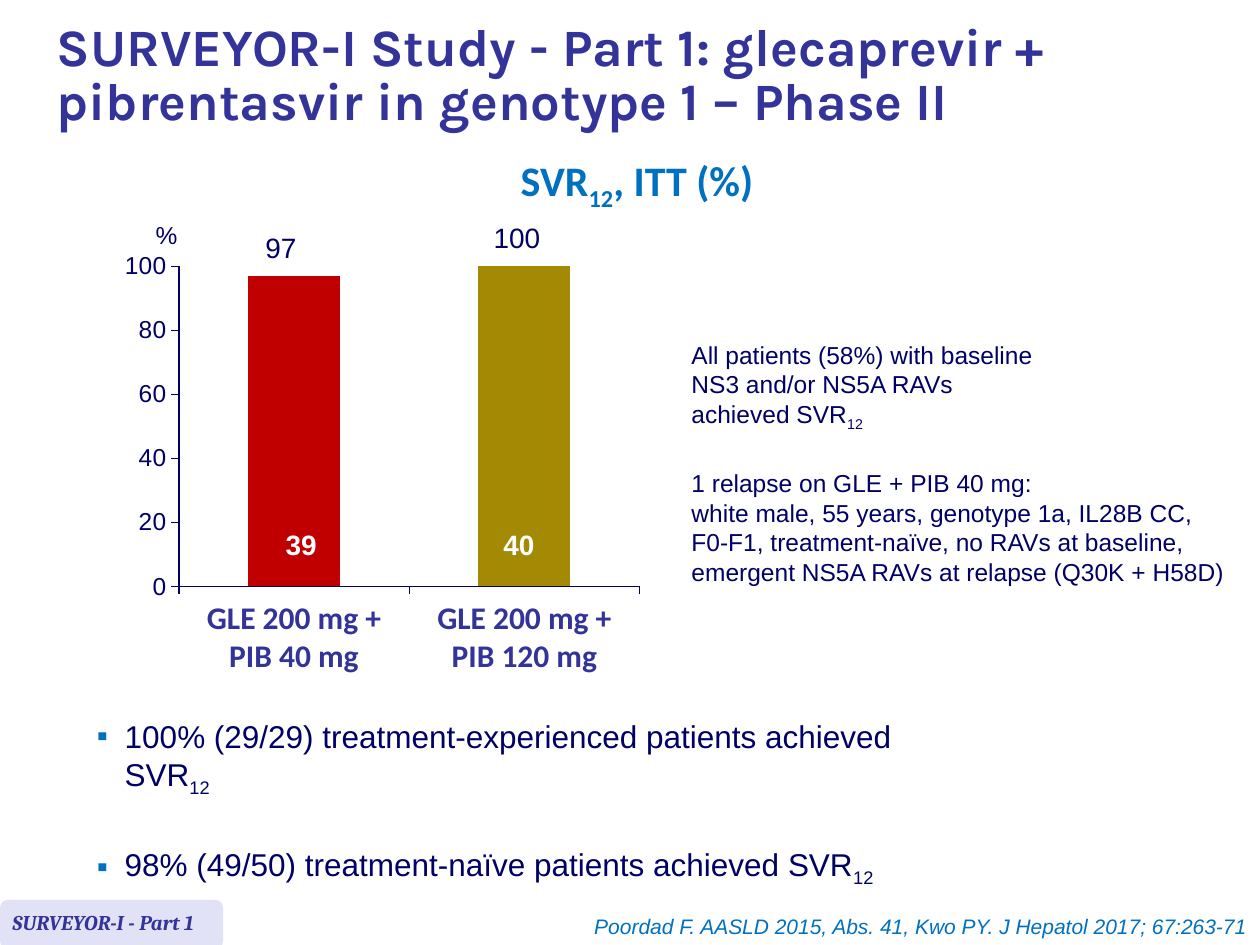
from pptx import Presentation
from pptx import util as u
from pptx.chart import data as chart_data
from pptx.dml import color
from pptx.enum import chart as chart_enum
from pptx.enum import shapes, text
from pptx.oxml import parse_xml
from pptx.oxml.ns import nsdecls

NAVY, INDIGO, BLUE, WHITE = "000066", "333399", "0070C0", "FFFFFF"
LEFT, CENTER, RIGHT = text.PP_ALIGN.LEFT, text.PP_ALIGN.CENTER, text.PP_ALIGN.RIGHT


def rgb(value):
    return color.RGBColor.from_string(value)


def set_font(font, size, value, name="Arial", bold=False, italic=False):
    font.size, font.name = u.Pt(size), name
    font.bold, font.italic = bold, italic
    font.color.rgb = rgb(value)


def fill_paragraph(paragraph, content, align=LEFT, **font):
    """Parts between bars are set as subscripts."""
    paragraph.alignment = align
    set_font(paragraph.font, **font)
    for index, part in enumerate(content.split("|")):
        if part:
            run = paragraph.add_run()
            run.text = part
            if index % 2:
                run._r.get_or_add_rPr().set("baseline", "-25000")


def place(shape, left, top, width, height):
    shape.left, shape.top = u.Cm(left), u.Cm(top)
    shape.width, shape.height = u.Cm(width), u.Cm(height)


def add_text(slide, box, lines, wrap=True, **style):
    shape = slide.shapes.add_textbox(*map(u.Cm, box))
    frame = shape.text_frame
    frame.word_wrap = wrap
    for index, line in enumerate(lines):
        paragraph = frame.paragraphs[0] if index == 0 else frame.add_paragraph()
        fill_paragraph(paragraph, line, **style)
    return shape


def set_title(slide, box):
    title = slide.shapes.title
    place(title, *box)
    frame = title.text_frame
    frame.auto_size = text.MSO_AUTO_SIZE.NONE
    frame.vertical_anchor = text.MSO_ANCHOR.MIDDLE
    paragraph = frame.paragraphs[0]
    paragraph.line_spacing = 0.85
    fill_paragraph(
        paragraph,
        "SURVEYOR-I Study - Part 1: glecaprevir + pibrentasvir in genotype 1 – Phase II",
        size=30, value=INDIGO, name="Karla", bold=True)


def set_findings(slide, box):
    body = slide.placeholders[1]
    place(body, *box)
    frame = body.text_frame
    frame.auto_size = text.MSO_AUTO_SIZE.NONE
    findings = ["100% (29/29) treatment-experienced patients achieved SVR|12|",
                "98% (49/50) treatment-naïve patients achieved SVR|12|"]
    for index, finding in enumerate(findings):
        paragraph = frame.paragraphs[0] if index == 0 else frame.add_paragraph()
        properties = paragraph._p.get_or_add_pPr()
        properties.set("marL", str(u.Cm(0.56)))
        properties.set("indent", str(u.Cm(-0.56)))
        properties.append(parse_xml(
            f'<a:buClr {nsdecls("a")}><a:srgbClr val="{BLUE}"/></a:buClr>'))
        properties.append(parse_xml(f'<a:buChar {nsdecls("a")} char="▪"/>'))
        paragraph.space_before = u.Pt(27 * index)
        fill_paragraph(paragraph, finding, size=18, value=NAVY)


def format_axis(axis, **font):
    axis.has_major_gridlines = False
    axis.major_tick_mark = chart_enum.XL_TICK_MARK.OUTSIDE
    axis.format.line.color.rgb = rgb(NAVY)
    axis.format.line.width = u.Pt(0.75)
    set_font(axis.tick_labels.font, **font)


def add_response_chart(slide, box):
    left, top, width, height = box
    data = chart_data.CategoryChartData()
    data.categories = ["GLE 200 mg + PIB 40 mg", "GLE 200 mg + PIB 120 mg"]
    data.add_series("SVR12", (97, 100))
    chart = slide.shapes.add_chart(
        chart_enum.XL_CHART_TYPE.COLUMN_CLUSTERED, *map(u.Cm, box), data).chart
    chart.has_legend = chart.has_title = False
    set_font(chart.font, 18, NAVY)

    format_axis(chart.category_axis, size=18, value=INDIGO, name="Calibri", bold=True)
    value_axis = chart.value_axis
    format_axis(value_axis, size=14, value=NAVY)
    value_axis.minimum_scale, value_axis.maximum_scale = 0, 100
    value_axis.major_unit = 20

    plot = chart.plots[0]
    plot.gap_width = 150
    plot.vary_by_categories = False
    for index, value in enumerate(("C00000", "A38904")):
        fill = plot.series[0].points[index].format.fill
        fill.solid()
        fill.fore_color.rgb = rgb(value)

    plot_area = chart._chartSpace.chart.plotArea
    for layout in plot_area.findall("{*}layout"):
        plot_area.remove(layout)
    frame = {"x": 0.12, "y": 0.05, "w": 0.86, "h": 0.73}
    sizes = "".join(f'<c:{key} val="{value}"/>' for key, value in frame.items())
    plot_area.insert(0, parse_xml(
        f'<c:layout {nsdecls("c")}><c:manualLayout><c:layoutTarget val="inner"/>'
        f'<c:xMode val="edge"/><c:yMode val="edge"/>{sizes}</c:manualLayout></c:layout>'))

    labels = [("39", 3.2, 5.59, 16, WHITE, True), ("40", 7.59, 5.59, 16, WHITE, True),
              ("97", 2.79, -0.41, 16, NAVY, False), ("100", 7.39, -0.61, 16, NAVY, False),
              ("%", 0.58, -0.61, 14, NAVY, False)]
    for label, x, y, size, value, bold in labels:
        add_text(slide, (left + x, top + y, 1.47 if label == "100" else 1.14, 0.94),
                 [label], wrap=False, size=size, value=value, bold=bold)


def add_chart_heading(slide, box):
    heading = add_text(slide, box, ["SVR|12|, ITT (%)"], align=CENTER,
                       size=24, value=BLUE, name="Calibri", bold=True)
    heading.text_frame.paragraphs[0].line_spacing = u.Pt(15.2)


def add_notes_column(slide, box):
    left, top, width, height = box
    add_text(slide, (left, top, 8.41, 2.06),
             ["All patients (58%) with baseline NS3 and/or NS5A RAVs", "achieved SVR|12|"],
             size=14, value=NAVY)
    add_text(slide, (left, top + 2.59, width, height - 2.59),
             ["1 relapse on GLE + PIB 40 mg:",
              "white male, 55 years, genotype 1a, IL28B CC,",
              "F0-F1, treatment-naïve, no RAVs at baseline,",
              "emergent NS5A RAVs at relapse (Q30K + H58D)"],
             wrap=False, size=14, value=NAVY)


def add_footer(slide, box):
    left, top, width, height = box
    badge = slide.shapes.add_shape(
        shapes.MSO_SHAPE.ROUNDED_RECTANGLE, *map(u.Cm, (left, top, 4.5, 0.99)))
    badge.shadow.inherit = False
    badge.fill.solid()
    badge.fill.fore_color.rgb = rgb("E2E2F6")
    badge.line.fill.background()
    add_text(slide, (left, top + 0.08, 4.65, 0.76), ["SURVEYOR-I - Part 1"],
             size=12, value=INDIGO, name="Cambria", bold=True, italic=True)
    add_text(slide, (left + width - 15.7, top + 0.15, 15.7, 0.76),
             ["Poordad F. AASLD 2015, Abs. 41, Kwo PY. J Hepatol 2017; 67:263-71"],
             align=RIGHT, size=12, value=BLUE, italic=True)


def main():
    presentation = Presentation()
    presentation.slide_width, presentation.slide_height = u.Cm(25.4), u.Cm(19.05)
    slide = presentation.slides.add_slide(presentation.slide_layouts[1])
    set_title(slide, (0.89, 0.2, 24.21, 2.72))
    add_chart_heading(slide, (4.19, 3.61, 17.3, 0.89))
    add_response_chart(slide, (2.31, 4.93, 10.8, 8.84))
    add_notes_column(slide, (13.69, 6.73, 11.35, 5.23))
    set_findings(slide, (1.7, 14.33, 17.8, 3.6))
    add_footer(slide, (0, 18.14, 25.4, 0.91))
    presentation.save("out.pptx")


if __name__ == "__main__":
    main()
